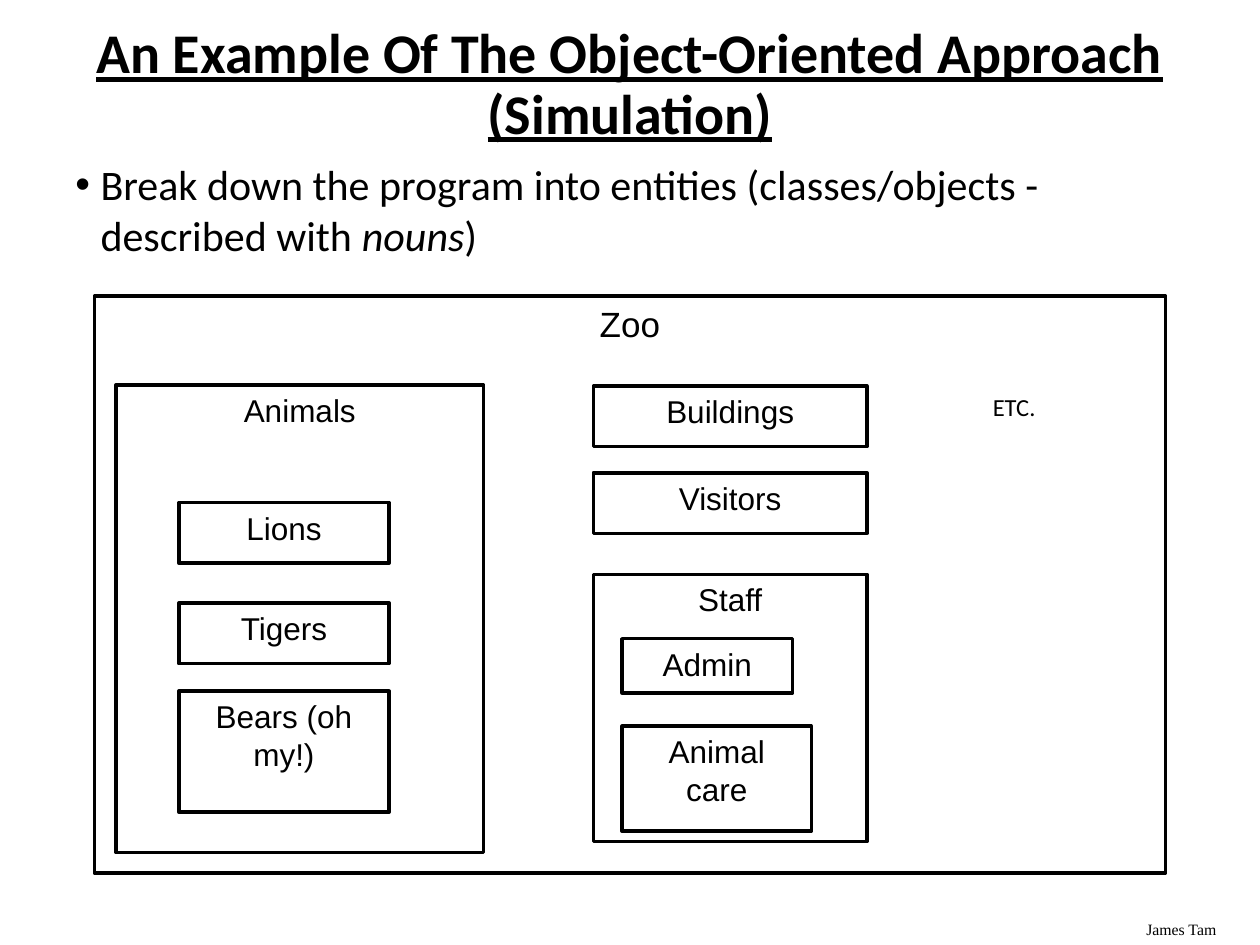
from pptx import Presentation
from pptx.dml.color import RGBColor
from pptx.enum.shapes import MSO_SHAPE as Shape
from pptx.enum.text import MSO_ANCHOR as Anchor, MSO_AUTO_SIZE as Fit, PP_ALIGN as Align
from pptx.oxml.ns import qn
from pptx.util import Pt
from lxml.etree import SubElement

BLACK = RGBColor(0, 0, 0)

# Label, left, top, width, height
ZOO = ("Zoo", 54, 169.2, 612, 329.8)
GROUPS = [
    ("Animals", 66.2, 220.1, 210.2, 267.1),
    ("Staff", 339.1, 328.2, 156.3, 152.8),
]
PLACES = [("Buildings", 220.6), ("Visitors", 270.2)]
BEASTS = [("Lions", 287.2, 34.6), ("Tigers", 344.6, 34.6), ("Bears (oh my!)", 395, 69.1)]
ROLES = [("Admin", 365, 97.5, 31), ("Animal\ncare", 415, 108.2, 60)]


def put(shape, left, top, width, height):
    spots = {"left": left, "top": top, "width": width, "height": height}
    for key, val in spots.items():
        setattr(shape, key, Pt(val))


def style(run, name, size, **more):
    run.font.color.rgb = BLACK
    for key, val in {"name": name, "size": Pt(size), **more}.items():
        setattr(run.font, key, val)


def add_title(slide, text):
    title = slide.shapes.title
    put(title, 36, 23.8, 648, 50.4)
    frame = title.text_frame
    frame.auto_size = Fit.NONE
    frame.vertical_anchor = Anchor.MIDDLE
    para = frame.paragraphs[0]
    para.alignment = Align.CENTER
    para.line_spacing = 0.9
    run = para.add_run()
    run.text = text
    style(run, "Calibri", 32, bold=True, underline=True)


def add_text(slide, spot, parts, name, size):
    """Add a text box from (text, italic) parts and return its paragraph."""
    box = slide.shapes.add_textbox(0, 0, 0, 0)
    put(box, *spot)
    box.text_frame.word_wrap = True
    para = box.text_frame.paragraphs[0]
    for text, slant in parts:
        run = para.add_run()
        run.text = text
        style(run, name, size, italic=slant)
    return para


def add_bullet(para):
    para.space_before = Pt(2)
    props = para._p.get_or_add_pPr()
    props.set("marL", str(Pt(14.4)))
    props.set("indent", str(Pt(-14.4)))
    SubElement(props, qn("a:buFont")).set("typeface", "Arial")
    SubElement(props, qn("a:buChar")).set("char", "•")


def add_box(slide, label, *spot, size=18):
    box = slide.shapes.add_shape(Shape.RECTANGLE, 0, 0, 0, 0)
    put(box, *spot)
    box.shadow.inherit = False
    box.fill.background()
    box.line.color.rgb = BLACK
    box.line.width = Pt(2)
    frame = box.text_frame
    frame.vertical_anchor = Anchor.TOP
    frame.text = label
    for para in frame.paragraphs:
        para.alignment = Align.CENTER
        style(para.runs[0], "Arial", size)


def main():
    deck = Presentation()
    deck.slide_width, deck.slide_height = Pt(720), Pt(540)
    slide = deck.slides.add_slide(deck.slide_layouts[5])

    add_text(slide, (648, 522, 72, 18), [("James Tam", False)], "Times New Roman", 9)
    add_title(slide, "An Example Of The Object-Oriented Approach (Simulation)")
    point = [
        ("Break down the program into entities (classes/objects - described with ", False),
        ("nouns", True),
        (")", False),
    ]
    add_bullet(add_text(slide, (36, 87.1, 643.7, 75), point, "Calibri", 24))

    add_box(slide, *ZOO, size=20)
    for group in GROUPS:
        add_box(slide, *group)
    for label, top in PLACES:
        add_box(slide, label, 339.1, top, 156.3, 34.6)
    for label, top, height in BEASTS:
        add_box(slide, label, 102.2, top, 120.2, height)
    for label, top, width, height in ROLES:
        add_box(slide, label, 355.5, top, width, height)
    add_text(slide, (560.2, 220.3, 90, 24), [("ETC.", False)], "Calibri", 14)

    deck.save("out.pptx")


if __name__ == "__main__":
    main()
